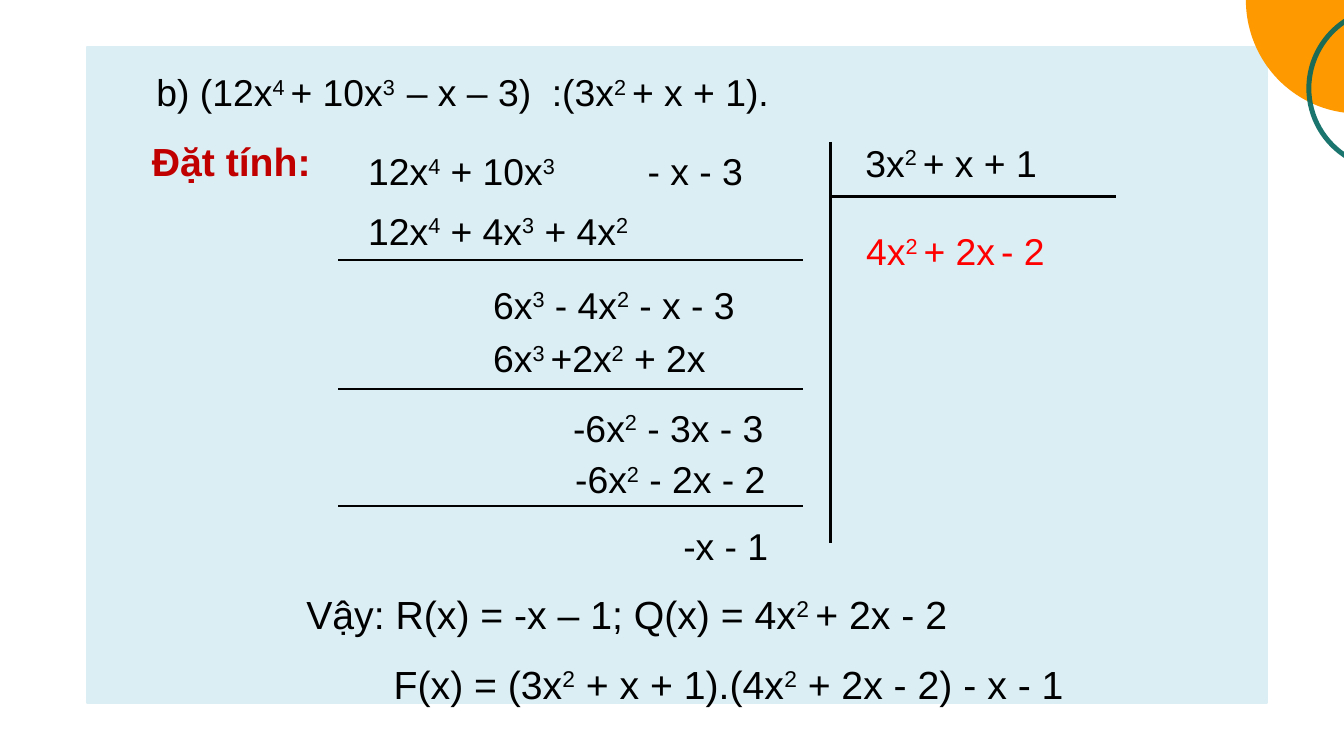
from dataclasses import dataclass

from lxml.etree import SubElement
from pptx import Presentation
from pptx.dml.color import RGBColor
from pptx.enum.shapes import MSO_CONNECTOR as Connector, MSO_SHAPE as Shape
from pptx.enum.text import PP_ALIGN as Align
from pptx.oxml.ns import qn
from pptx.util import Inches, Pt


@dataclass(frozen=True)
class Theme:
    font: str = "Arial"
    panel: str = "DBEEF4"
    orange: str = "FF9900"
    teal: str = "036660"
    ink: str = "000000"
    heading: str = "C00000"
    quotient: str = "FF0000"
    working_size: int = 40
    heading_size: int = 42
    rule_width: int = 3


class PageBuilder:
    def __init__(self, page, theme):
        self.page, self.theme = page, theme

    def shape(self, kind, left, top, width, height, color, alpha=None):
        box = self.page.shapes.add_shape(
            kind, Inches(left), Inches(top), Inches(width), Inches(height))
        box.shadow.inherit = False
        box.fill.solid()
        box.fill.fore_color.rgb = RGBColor.from_string(color)
        box.line.fill.background()
        if alpha:
            tint = box._element.spPr.find(qn("a:solidFill"))[0]
            SubElement(tint, qn("a:alpha")).set("val", str(alpha * 1000))
        return box

    def rule(self, x1, y1, x2, y2):
        line = self.page.shapes.add_connector(
            Connector.STRAIGHT, Inches(x1), Inches(y1), Inches(x2), Inches(y2))
        line.line.color.rgb = RGBColor.from_string(self.theme.ink)
        line.line.width = Pt(self.theme.rule_width)
        SubElement(line._element.spPr, qn("a:effectLst"))

    def text(self, left, top, width, height, *lines, size=None, color=None,
             bold=False, spacing=None, after=None):
        """Write one paragraph per line; parts between ^ marks are superscript."""
        box = self.page.shapes.add_textbox(
            Inches(left), Inches(top), Inches(width), Inches(height))
        frame = box.text_frame
        frame.word_wrap = True
        for index, line in enumerate(lines):
            para = frame.add_paragraph() if index else frame.paragraphs[0]
            if spacing:
                para.alignment, para.line_spacing = Align.JUSTIFY, spacing
            if after:
                para.space_after = Pt(after)
            for order, part in enumerate(line.split("^")):
                if not part:
                    continue
                span = para.add_run()
                span.text = part
                span.font.name = self.theme.font
                span.font.size = Pt(size or self.theme.working_size)
                span.font.bold = bold
                span.font.color.rgb = RGBColor.from_string(color or self.theme.ink)
                if order % 2:
                    span._r.get_or_add_rPr().set("baseline", "30000")
        return frame.paragraphs

    def working(self, left, top, width, line, height=1.11, color=None):
        return self.text(left, top, width, height, line,
                         color=color, spacing=1.5, after=8)


def main():
    theme = Theme()
    deck = Presentation()
    deck.slide_width, deck.slide_height = Inches(20), Inches(11.25)
    page = deck.slides.add_slide(deck.slide_layouts[6])
    builder = PageBuilder(page, theme)

    # Panel and corner decoration
    panel = builder.shape(Shape.RECTANGLE, 1.3, 0.7, 17.55, 9.76, theme.panel)
    panel.line.color.rgb = RGBColor.from_string(theme.panel)
    panel.line.width = Pt(2)
    builder.shape(Shape.OVAL, 18.54, -1.69, 3.36, 3.38, theme.orange)
    ring = builder.shape(Shape.DONUT, 19.44, 0.08, 2.47, 2.47, theme.teal, alpha=90)
    ring.adjustments[0] = 0.03

    # Conclusion
    conclusion = builder.text(
        4.46, 8.38, 11.79, 2.22,
        "Vậy: R(x) = -x – 1; Q(x) = 4x^2 ^+ 2x - 2",
        "F(x) = (3x^2^ + x + 1).(4x^2^ + 2x - 2) - x - 1",
        size=theme.heading_size, spacing=1.5)
    conclusion[1]._p.get_or_add_pPr().set("marL", str(Inches(1.3)))

    # Exercise and heading
    builder.text(2.23, 0.98, 9.77, 0.77,
                 "b) (12x^4 ^+ 10x^3  ^– x – 3)  :(3x^2 ^+ x + 1).")
    builder.text(2.16, 2, 2.65, 0.81, "Đặt tính:",
                 size=theme.heading_size, color=theme.heading, bold=True)

    # Division bracket and subtraction rules
    bracket_x = 12.36
    builder.rule(bracket_x, 2.11, bracket_x, 8.08)
    builder.rule(bracket_x, 2.92, 16.61, 2.92)
    for y in (3.87, 5.79, 7.53):
        builder.rule(5.03, y, 11.95, y)

    # Dividend, with a tab stop over the missing square term
    dividend = builder.working(5.38, 1.82, 6.22, "12x^4^ + 10x^3^\t- x - 3", height=0.99)
    tabs = SubElement(dividend[0]._p.get_or_add_pPr(), qn("a:tabLst"))
    SubElement(tabs, qn("a:tab"), pos=str(Inches(4.16)), algn="l")

    # Divisor and quotient
    builder.text(12.78, 2.03, 2.88, 0.77, "3x^2 ^+ x + 1")
    builder.working(12.79, 3.01, 3.25, "4x^2 ^+ 2x^ ^- 2", color=theme.quotient)

    # Steps of the long division
    steps = [
        (5.38, 2.71, 4.2, "12x^4^ + 4x^3^ + 4x^2^"),
        (7.24, 3.81, 3.9, "6x^3^ - 4x^2^ - x - 3"),
        (7.24, 4.61, 3.52, "6x^3 ^+2x^2^ + 2x"),
        (8.43, 5.64, 3.09, "-6x^2^ - 3x - 3"),
        (8.46, 6.41, 3.09, "-6x^2^ - 2x - 2"),
        (10.07, 7.41, 1.48, "-x - 1"),
    ]
    for left, top, width, line in steps:
        builder.working(left, top, width, line)

    deck.save("out.pptx")


if __name__ == "__main__":
    main()
